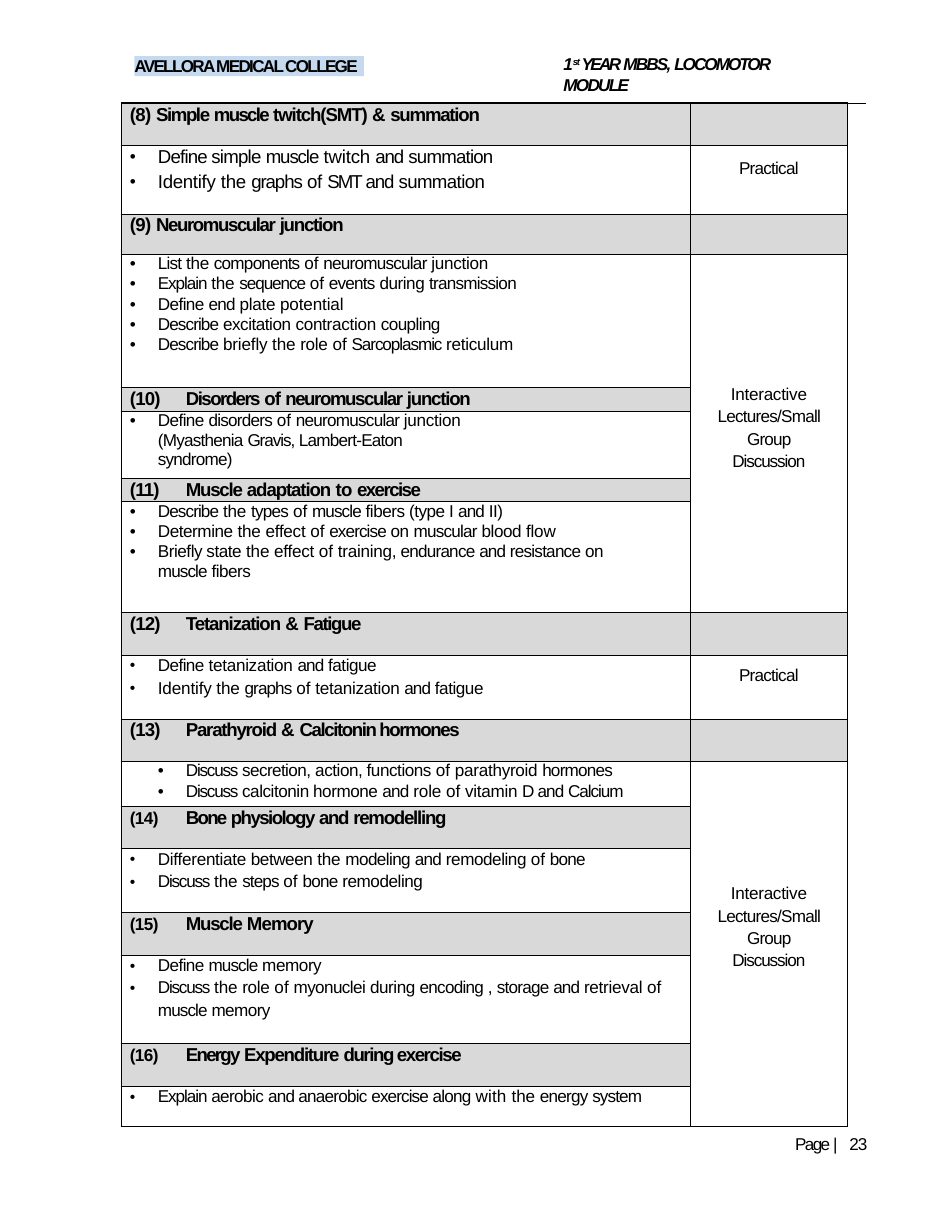
from dataclasses import dataclass

from lxml.etree import SubElement
from pptx import Presentation
from pptx.dml.color import RGBColor
from pptx.enum.shapes import MSO_SHAPE as Shape
from pptx.enum.text import PP_ALIGN as Align
from pptx.oxml.ns import qn
from pptx.util import Inches, Pt

BLACK = RGBColor(0, 0, 0)
GREY = RGBColor(0xD9, 0xD9, 0xD9)
PALE_BLUE = RGBColor(0xC5, 0xD9, 0xEF)
FONT = "Arial"
NO_STYLE = "{2D5ABB26-0587-4C30-8999-92F81FD0307C}"
COLUMNS = (5.08, 1.41, 0.16)
TOPIC, METHOD, MARGIN = range(3)


@dataclass
class Bullet:
    runs: tuple
    before: float = 0
    leading: object = None
    right: float = 0


@dataclass
class Section:
    number: str
    heading: tuple
    heights: tuple
    bullets: tuple
    size: float = 11
    left: float = 0.33
    dot: int = 100
    number_size: float = 12
    number_spacing: float = -0.5


# Every run is a pair: text, letter spacing in points.
SECTIONS = (
    Section("(8) ", (("Simple ", -0.9), ("muscle ", -1.1), ("twitch(SMT) ", -0.7), ("& ", -0.2),
                     ("summation", -0.8)), (0.38, 0.61), (
        Bullet((("Define simple ", -0.5), ("muscle ", -0.7), ("twitch ", -0.1), ("and ", -0.7),
                ("summation", -0.5)), 0, Pt(14.1)),
        Bullet((("Identify ", -0.2), ("the ", -0.1), ("graphs ", -0.7), ("of ", -0.1),
                ("SMT ", -1.3), ("and ", -0.7), ("summation", -0.4)), 2.5),
    ), size=12, dot=92, number_spacing=-0.4),
    Section("(9) ", (("Neuromuscular ", -0.9), ("junction", -0.8)), (0.36, 1.19), (
        Bullet((("List ", -0.5), ("the ", -0.2), ("components ", -0.5), ("of ", 0),
                ("neuromuscular ", -0.5), ("junction", -0.2)), 0.2),
        Bullet((("Explain ", -0.7), ("the ", -0.1), ("sequence ", -0.7), ("of ", 0),
                ("events ", -0.5), ("during ", -0.3), ("transmission", -0.5)), 0.8),
        Bullet((("Define ", -0.4), ("end ", -0.5), ("plate ", -0.2), ("potential", -0.1)), 0.8),
        Bullet((("Describe ", -0.6), ("excitation ", -0.3), ("contraction ", -0.2),
                ("coupling", -0.4)), 0.8),
        Bullet((("Describe ", -0.6), ("briefly the ", -0.1), ("role ", -0.2), ("of ", 0),
                ("Sarcoplasmic ", -0.7), ("reticulum", -0.2)), 0.7),
    ), number_spacing=-0.4),
    Section("(10)\t", (("Disorders ", -1), ("of ", -0.6), ("neuromuscular ", -0.9),
                       ("junction", -0.8)), (0.21, 0.6), (
        Bullet((("Define ", -0.4), ("disorders ", -0.5), ("of ", 0), ("neuromuscular ", -0.5),
                ("junction ", -0.2), ("(Myasthenia ", -0.5), ("Gravis, ", -0.7),
                ("Lambert-Eaton syndrome)", -0.5)), 0.1, 1.02, right=1.94),
    )),
    Section("(11)\t", (("Muscle ", -0.8), ("adaptation ", -0.7), ("to ", -0.4),
                       ("exercise", -1)), (0.21, 0.99), (
        Bullet((("Describe ", -0.6), ("the ", -0.1), ("types ", -0.5), ("of ", 0),
                ("muscle ", -0.6), ("fibers (type I ", -0.3), ("and ", -0.6), ("II)", -0.3)), 0.2),
        Bullet((("Determine ", -0.3), ("the ", -0.1), ("effect ", -0.2), ("of ", 0),
                ("exercise ", -0.6), ("on ", -0.3), ("muscular ", -0.5), ("blood ", -0.3),
                ("flow", -0.1)), 0.8),
        Bullet((("Briefly state ", -0.3), ("the ", -0.1), ("effect ", -0.2), ("of ", 0),
                ("training,", -0.2), (" endurance ", -0.5), ("and ", -0.6), ("resistance ", -0.5),
                ("on ", -0.3), ("muscle ", -0.6), ("fibers", -0.3)), 0.6, 1.02, right=0.53),
    )),
    Section("(12)\t", (("Tetanization ", -0.7), ("& ", -0.2), ("Fatigue", -0.9)), (0.38, 0.57), (
        Bullet((("Define ", -0.4), ("tetanization ", -0.2), ("and ", -0.6), ("fatigue", -0.3)),
               0, Pt(12.9)),
        Bullet((("Identify the ", -0.1), ("graphs ", -0.6), ("of ", 0), ("tetanization ", -0.2),
                ("and ", -0.6), ("fatigue", -0.3)), 2.2),
    ), dot=91),
    Section("(13)\t", (("Parathyroid ", -0.8), ("& ", -0.2), ("Calcitonin hormones", -0.9)),
            (0.38, 0.4), (
        Bullet((("Discuss ", -0.8), ("secretion, ", -0.4), ("action, functions ", -0.3),
                ("of ", 0), ("parathyroid ", -0.2), ("hormones", -0.5)), 0.2),
        Bullet((("Discuss ", -0.8), ("calcitonin hormone ", -0.3), ("and ", -0.5), ("role ", -0.1),
                ("of ", 0), ("vitamin ", -0.2), ("D ", -1.2), ("and ", -0.6), ("Calcium", -0.7)),
               0.8),
    ), left=0.58),
    Section("(14)\t", (("Bone ", -1.1), ("physiology ", -1), ("and ", -0.9),
                       ("remodelling", -0.8)), (0.38, 0.57), (
        Bullet((("Differentiate ", -0.2), ("between ", -0.3), ("the ", -0.1), ("modeling ", -0.4),
                ("and ", -0.5), ("remodeling ", -0.3), ("of ", 0), ("bone", -0.5)), 0, Pt(13)),
        Bullet((("Discuss ", -0.8), ("the ", -0.1), ("steps ", -0.6), ("of ", 0), ("bone ", -0.5),
                ("remodeling", -0.3)), 2.1),
    ), dot=91, number_size=11, number_spacing=-0.4),
    Section("(15)\t", (("Muscle ", -0.8), ("Memory", -0.6)), (0.38, 0.79), (
        Bullet((("Define ", -0.4), ("muscle ", -0.6), ("memory", -0.3)), 0, Pt(12.9)),
        Bullet((("Discuss ", -0.8), ("the ", -0.1), ("role ", -0.2), ("of ", 0),
                ("myonuclei ", -0.4), ("during ", -0.3), ("encoding ", -0.5), (", ", -0.3),
                ("storage ", -0.5), ("and ", -0.6), ("retrieval ", -0.2), ("of ", 0),
                ("muscle ", -0.6), ("memory", -0.4)), 0, 1.17),
    ), dot=91, number_size=11, number_spacing=-0.4),
    Section("(16)\t", (("Energy ", -1.1), ("Expenditure ", -0.8), ("during exercise", -0.9)),
            (0.38, 0.36), (
        Bullet((("Explain ", -0.7), ("aerobic ", -0.4), ("and anaerobic ", -0.5),
                ("exercise ", -0.6), ("along ", -0.5), ("with ", 0.1), ("the ", -0.1),
                ("energy ", -0.5), ("system", -0.6)), 0, Pt(12.9)),
    ), dot=91, number_size=11, number_spacing=-0.4),
)
PRACTICAL = (("Practical", -0.5),)
LECTURES = (("Interactive ", -0.2), ("Lectures/Small Group ", -0.5), ("Discussion", -0.7))
# First row, last row, top margin, runs
METHODS = ((1, 1, 0.12, PRACTICAL), (3, 7, 1.14, LECTURES),
           (9, 9, 0.1, PRACTICAL), (11, 17, 1.07, LECTURES))


def add_runs(para, runs, size=11, bold=False, italic=False):
    for text, spacing in runs:
        span = para.add_run()
        span.text = text
        span.font.name, span.font.size = FONT, Pt(size)
        span.font.bold, span.font.italic = bold, italic
        span.font.color.rgb = BLACK
        span._r.get_or_add_rPr().set("spc", str(round(spacing * 100)))


def set_indent(para, left, hanging=0, right=0):
    props = para._p.get_or_add_pPr()
    for name, value in (("marL", left), ("indent", -hanging), ("marR", right)):
        props.set(name, str(Inches(value)))
    return props


def set_margins(frame, left=0, top=0, right=0):
    frame.margin_left, frame.margin_top = Inches(left), Inches(top)
    frame.margin_right, frame.margin_bottom = Inches(right), 0


def set_borders(cell, **widths):
    """Draw the named sides (L, R, T, B) and clear the others."""
    props = cell._tc.get_or_add_tcPr()
    for place, side in enumerate("LRTB"):
        line = SubElement(props, qn(f"a:ln{side}"), w=str(Pt(widths.get(side, 0))))
        props.insert(place, line)
        if side in widths:
            fill = SubElement(line, qn("a:solidFill"))
            SubElement(fill, qn("a:srgbClr"), val=str(BLACK))
        else:
            SubElement(line, qn("a:noFill"))


def fill_heading(cell, section):
    para = cell.text_frame.paragraphs[0]
    para.line_spacing = Pt(14.1)
    tabs = SubElement(set_indent(para, 0.08), qn("a:tabLst"))
    SubElement(tabs, qn("a:tab"), pos=str(Inches(0.66)), algn="l")
    add_runs(para, ((section.number, section.number_spacing),), section.number_size, bold=True)
    add_runs(para, section.heading, 12, bold=True)


def fill_bullets(cell, section):
    frame = cell.text_frame
    for index, bullet in enumerate(section.bullets):
        para = frame.add_paragraph() if index else frame.paragraphs[0]
        para.space_before = Pt(bullet.before)
        para.line_spacing = bullet.leading
        props = set_indent(para, section.left, 0.25, bullet.right)
        SubElement(props, qn("a:buSzPct"), val=str(section.dot * 1000))
        SubElement(props, qn("a:buFont"), typeface=FONT)
        SubElement(props, qn("a:buChar"), char="•")
        add_runs(para, bullet.runs, section.size)


def add_syllabus(page):
    heights = [height for section in SECTIONS for height in section.heights]
    frame = page.shapes.add_table(len(heights), len(COLUMNS), Inches(1.08), Inches(0.92),
                                  Inches(sum(COLUMNS)), Inches(sum(heights)))
    frame._element.find(".//" + qn("a:tableStyleId")).text = NO_STYLE
    table = frame.table
    table.first_row = table.horz_banding = False
    for column, width in zip(table.columns, COLUMNS):
        column.width = Inches(width)
    merged = {row for first, last, *_ in METHODS for row in range(first, last + 1)}
    for row, height in enumerate(heights):
        table.rows[row].height = Inches(height)
        top = 0.5 if row else 1
        for column in (TOPIC, METHOD):
            cell = table.cell(row, column)
            set_margins(cell)
            shaded = row % 2 == 0 if column == TOPIC else row not in merged
            if shaded:
                cell.fill.solid()
                cell.fill.fore_color.rgb = GREY
            else:
                cell.fill.background()
            set_borders(cell, L=0.5, R=0.5, T=top, B=0.5)
        edge = table.cell(row, MARGIN)
        set_margins(edge)
        set_borders(edge, L=0.5, **({} if row else {"T": 0.75}))
        fill = fill_bullets if row % 2 else fill_heading
        fill(table.cell(row, TOPIC), SECTIONS[row // 2])
    for first, last, top, runs in METHODS:
        cell = table.cell(first, METHOD)
        if last > first:
            cell.merge(table.cell(last, METHOD))
        set_margins(cell, 0.2, top, 0.2)
        para = cell.text_frame.paragraphs[0]
        para.alignment = Align.CENTER
        para.line_spacing = 1.17 if last > first else None
        add_runs(para, runs)
    table.cell(0, MARGIN).merge(table.cell(len(heights) - 1, MARGIN))


def add_label(page, left, top, width, height, fill=None, right=0, leading=None):
    """Add a text box, or a filled band, and return its paragraph."""
    area = [Inches(value) for value in (left, top, width, height)]
    if fill is None:
        box = page.shapes.add_textbox(*area)
    else:
        box = page.shapes.add_shape(Shape.RECTANGLE, *area)
        box.shadow.inherit = False
        box.fill.solid()
        box.fill.fore_color.rgb = fill
        box.line.fill.background()
    set_margins(box.text_frame, right=right)
    box.text_frame.word_wrap = True
    para = box.text_frame.paragraphs[0]
    para.alignment, para.line_spacing = Align.LEFT, leading
    return para


def main():
    deck = Presentation()
    deck.slide_width, deck.slide_height = Inches(8.5), Inches(11)
    page = deck.slides.add_slide(deck.slide_layouts[6])
    footer = add_label(page, 7.1, 10.14, 0.75, 0.18, leading=Pt(11.5))
    add_runs(footer, (("Page ", -1.1), ("| ", 2.2), ("23", -0.6)))
    module = add_label(page, 5.03, 0.48, 2.49, 0.21, right=0.15)
    add_runs(module, (("1", -0.6),), bold=True, italic=True)
    add_runs(module, (("st ", -0.8),), 10.5, bold=True, italic=True)
    module.runs[-1].font._element.set("baseline", "32000")
    add_runs(module, (("YEAR ", -1.7), ("MBBS, ", -1.2), ("LOCOMOTOR ", -1.3), ("MODULE", -1.1)),
             bold=True, italic=True)
    college = add_label(page, 1.2, 0.5, 2.05, 0.18, PALE_BLUE, leading=Pt(12.9))
    add_runs(college, (("AVELLORA MEDICAL COLLEGE", -1.1),), bold=True)
    add_syllabus(page)
    deck.save("out.pptx")


if __name__ == "__main__":
    main()
